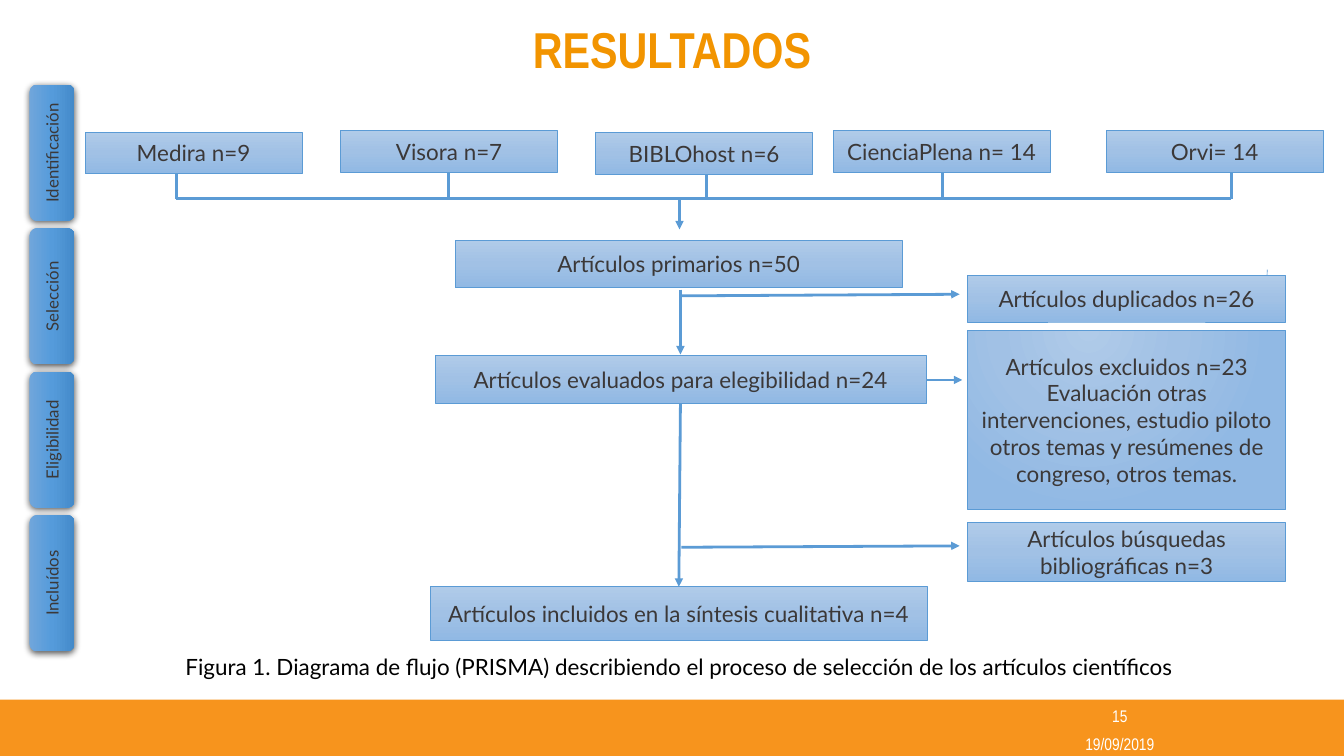
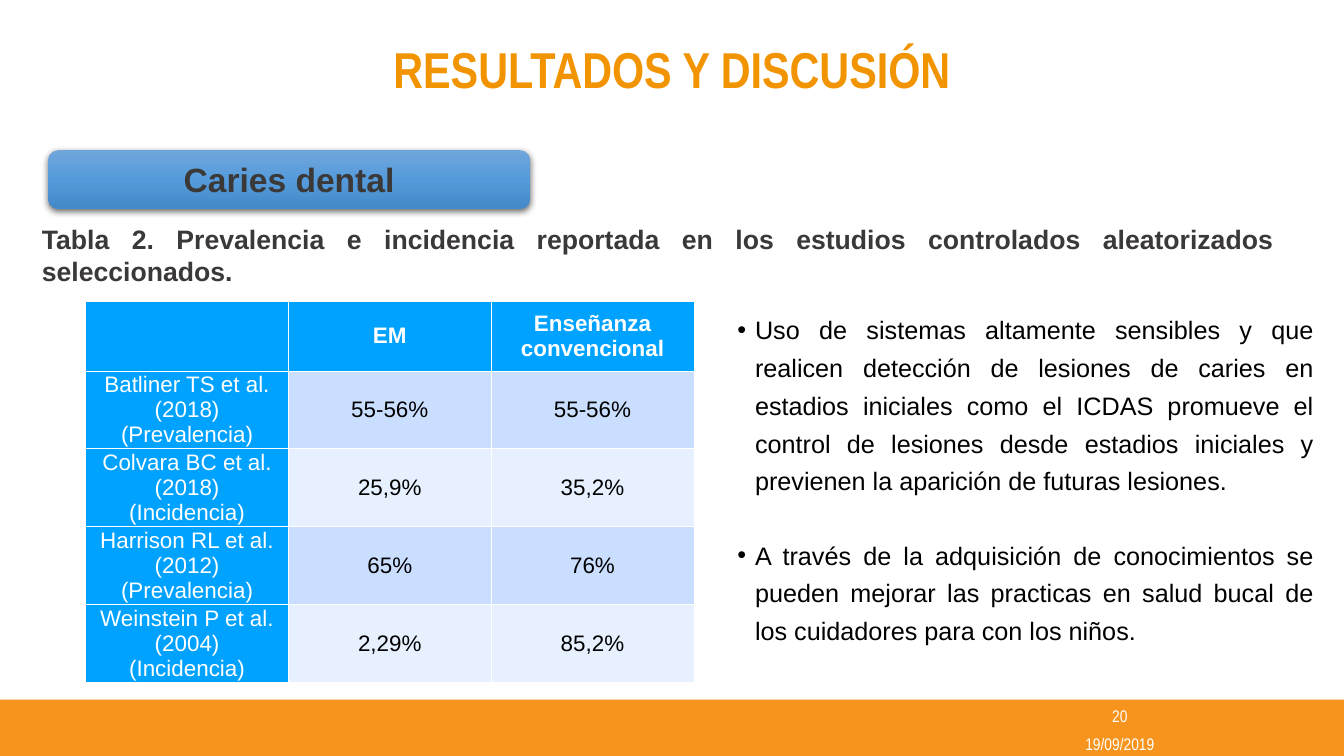
import copy
from collections import namedtuple

import lxml.etree
import pptx
import pptx.dml.color
import pptx.enum.shapes
import pptx.enum.text
import pptx.oxml.ns
import pptx.util

Cm = pptx.util.Cm
Pt = pptx.util.Pt
RGBColor = pptx.dml.color.RGBColor
PP_ALIGN = pptx.enum.text.PP_ALIGN
MSO_ANCHOR = pptx.enum.text.MSO_ANCHOR
MSO_SHAPE = pptx.enum.shapes.MSO_SHAPE
qn = pptx.oxml.ns.qn

# Shared look
WHITE = RGBColor(0xFF, 0xFF, 0xFF)
BLACK = RGBColor(0, 0, 0)
DARK = RGBColor(0x3B, 0x38, 0x38)
BAND_ORANGE = RGBColor(0xF7, 0x94, 0x1D)
TITLE_ORANGE = RGBColor(0xF2, 0x94, 0x00)
FLOW_BLUE = RGBColor(0x5B, 0x9B, 0xD5)
HEADER_BLUE = RGBColor(0x00, 0xA2, 0xFF)
ROW_TINTS = (RGBColor(0xCA, 0xDF, 0xFF), RGBColor(0xE6, 0xF0, 0xFF))
PALE_GRADIENT = (RGBColor(0xB0, 0xCB, 0xE9), RGBColor(0xA1, 0xC1, 0xE5),
                 RGBColor(0x91, 0xB9, 0xE4))
STRONG_GRADIENT = (RGBColor(0x70, 0xA6, 0xDB), RGBColor(0x55, 0x9B, 0xDB),
                   RGBColor(0x44, 0x8A, 0xC9))
HEADING_FONT, BODY_FONT, FLOW_FONT = "Arial Narrow", "Arial", "Lato"

# Boxes are in centimetres
Box = namedtuple("Box", "left top width height")


def inside(region, x, y, width, height):
    return Box(region.left + x, region.top + y, width, height)


def lengths(box):
    return [Cm(value) for value in box]


def add_run(paragraph, text, size, color, font, bold=False):
    run = paragraph.add_run()
    run.text = text
    run.font.size = Pt(size)
    run.font.color.rgb = color
    run.font.name = font
    run.font.bold = bold


def set_frame(frame, inset=0.25, anchor=MSO_ANCHOR.MIDDLE, wrap=True):
    frame.word_wrap = wrap
    frame.auto_size = pptx.enum.text.MSO_AUTO_SIZE.NONE
    frame.vertical_anchor = anchor
    frame.margin_left = frame.margin_right = Cm(inset)
    frame.margin_top = frame.margin_bottom = Cm(inset)


def add_text(slide, box, text, size, color, font, bold=False,
             align=PP_ALIGN.CENTER, **frame_options):
    frame = slide.shapes.add_textbox(*lengths(box)).text_frame
    set_frame(frame, **frame_options)
    frame.paragraphs[0].alignment = align
    add_run(frame.paragraphs[0], text, size, color, font, bold)


def fill_gradient(shape, colors, radial=False):
    shape.fill.gradient()
    shape.fill.gradient_angle = 270
    gradient = shape._element.spPr.find(qn("a:gradFill"))
    stops = gradient.find(qn("a:gsLst"))
    stops.append(copy.deepcopy(stops[-1]))
    for index, (stop, color) in enumerate(zip(shape.fill.gradient_stops, colors)):
        stop.position = index / 2
        stop.color.rgb = color
    if radial:
        linear = gradient.find(qn("a:lin"))
        circle = lxml.etree.Element(qn("a:path"), path="circle")
        lxml.etree.SubElement(circle, qn("a:fillToRect"),
                              l="38000", t="-20000", r="62000", b="120000")
        gradient.replace(linear, circle)


def add_flow_box(slide, box, text, radial=False):
    step = slide.shapes.add_shape(MSO_SHAPE.RECTANGLE, *lengths(box))
    step.shadow.inherit = False
    fill_gradient(step, PALE_GRADIENT, radial)
    step.line.color.rgb = FLOW_BLUE
    step.line.width = Pt(1)
    set_frame(step.text_frame)
    step.text_frame.margin_top = step.text_frame.margin_bottom = 0
    paragraph = step.text_frame.paragraphs[0]
    paragraph.alignment = PP_ALIGN.CENTER
    add_run(paragraph, text, 32, DARK, FLOW_FONT)


def add_tab(slide, box, text, size, font, bold=False, rotation=0):
    tab = slide.shapes.add_shape(MSO_SHAPE.ROUNDED_RECTANGLE, *lengths(box))
    tab.rotation = rotation
    tab.line.fill.background()
    fill_gradient(tab, STRONG_GRADIENT)
    # Soft shadow below the tab
    tab.shadow.inherit = False
    effects = tab._element.spPr.find(qn("a:effectLst"))
    shadow = lxml.etree.SubElement(
        effects, qn("a:outerShdw"), blurRad=str(Pt(10)), dist=str(Pt(3)),
        dir="5400000", algn="ctr", rotWithShape="0")
    shade = lxml.etree.SubElement(shadow, qn("a:srgbClr"), val="000000")
    lxml.etree.SubElement(shade, qn("a:alpha"), val="63000")
    set_frame(tab.text_frame)
    paragraph = tab.text_frame.paragraphs[0]
    paragraph.alignment = PP_ALIGN.CENTER
    add_run(paragraph, text, size, DARK, font, bold)


def add_link(slide, region, start, end, arrow=True, width=4):
    points = [Cm(region[axis] + point[axis])
              for point in (start, end) for axis in (0, 1)]
    link = slide.shapes.add_connector(
        pptx.enum.shapes.MSO_CONNECTOR.STRAIGHT, *points)
    link.line.color.rgb = FLOW_BLUE
    link.line.width = Pt(width)
    properties = link._element.spPr
    if arrow:
        lxml.etree.SubElement(properties.find(qn("a:ln")), qn("a:tailEnd"),
                              type="triangle")
    lxml.etree.SubElement(properties, qn("a:effectLst"))


def add_title(slide, box, text):
    title = slide.shapes.title
    title.left, title.top, title.width, title.height = lengths(box)
    set_frame(title.text_frame)
    paragraph = title.text_frame.paragraphs[0]
    paragraph.alignment = PP_ALIGN.CENTER
    add_run(paragraph, text, 72, TITLE_ORANGE, HEADING_FONT, True)


def add_footer(slide, region, number):
    band = slide.shapes.add_shape(MSO_SHAPE.RECTANGLE, *lengths(region))
    band.shadow.inherit = False
    band.fill.solid()
    band.fill.fore_color.rgb = BAND_ORANGE
    band.line.fill.background()
    add_text(slide, inside(region, 54.16, 1.49, 5.36, 1.52), "19/09/2019",
             24, WHITE, HEADING_FONT)
    add_text(slide, inside(region, 56.11, 0.07, 1.47, 1.52), number,
             24, WHITE, HEADING_FONT, wrap=False)


def start_slide(deck, title, title_top, number):
    slide = deck.slides.add_slide(deck.slide_layouts[5])
    add_footer(slide, Box(-0.41, 35.26, 68.53, 2.84), number)
    add_title(slide, Box(11.96, title_top, 43.82, 5.46), title)
    return slide


# Slide 15: selection flow
def add_stages(slide, region):
    stages = ("Identificación", "Selección", "Eligibilidad", "Incluídos")
    length, pitch = 6.86, 7.23
    for index, stage in enumerate(stages):
        # The frame is turned about its centre
        box = inside(region, (region.width - length) / 2,
                     index * pitch + (length - region.width) / 2,
                     length, region.width)
        add_tab(slide, box, stage, 24, FLOW_FONT, rotation=270)


def add_sources(slide, region):
    # Label, box offset, stem position
    sources = (("Medira n=9", 0, 0.07, 4.6),
               ("Visora n=7", 12.88, 0, 18.32),
               ("BIBLOhost n=6", 25.73, 0.1, 31.32),
               ("CienciaPlena n= 14", 37.7, 0, 43.21),
               ("Orvi= 14", 51.46, 0, 57.76))
    bus = region.height
    for label, x, y, stem in sources:
        add_link(slide, region, (stem, 2.1), (stem, bus), arrow=False)
        add_flow_box(slide, inside(region, x, y, 10.93, 2.11), label)
    add_link(slide, region, (sources[0][3], bus), (sources[-1][3], bus),
             arrow=False)


def add_flow(slide, region):
    add_link(slide, region, (42.17, 3.58), (42.14, 4.95), arrow=False, width=1)
    arrows = (((12.55, 0), (12.55, 1.55)),
              ((12.6, 4.59), (12.6, 7.85)),
              ((12.6, 10.34), (12.52, 19.56)),
              ((12.65, 4.9), (26.67, 4.82)),
              ((24.84, 9.14), (26.8, 9.14)),
              ((12.65, 17.57), (26.67, 17.5)))
    for start, end in arrows:
        add_link(slide, region, start, end)

    main_steps = (("Artículos primarios n=50", 1.25, 2.08, 22.53, 2.41),
                  ("Artículos evaluados para elegibilidad n=24",
                   0.23, 7.9, 24.77, 2.41),
                  ("Artículos incluidos en la síntesis cualitativa n=4",
                   0, 19.56, 25.02, 2.69))
    for text, *place in main_steps:
        add_flow_box(slide, inside(region, *place), text)

    side_steps = (("Artículos duplicados n=26", 3.86, 2.36, False),
                  ("Artículos excluidos n=23 Evaluación otras intervenciones, "
                   "estudio piloto otros temas y resúmenes de congreso, "
                   "otros temas.", 6.63, 9.04, True),
                  ("Artículos búsquedas bibliográficas n=3", 16.33, 2.95, False))
    for text, y, height, radial in side_steps:
        add_flow_box(slide, inside(region, 27.08, y, 16.02, height), text, radial)


def build_flow_slide(deck):
    slide = start_slide(deck, "RESULTADOS", -0.3, "15")
    add_stages(slide, Box(1.48, 4.27, 2.28, 28.55))
    add_sources(slide, Box(4.29, 6.58, 62.46, 3.43))
    add_flow(slide, Box(21.69, 10.01, 43.1, 22.25))
    add_text(slide, Box(2.46, 32.69, 63.55, 2.06),
             "Figura 1. Diagrama de flujo (PRISMA) describiendo el proceso "
             "de selección de los artículos científicos",
             32, BLACK, FLOW_FONT, anchor=MSO_ANCHOR.TOP)


# Slide 20: caries table and discussion
def add_caries_table(slide, region):
    rows = (([], ["EM"], ["Enseñanza convencional"]),
            (["Batliner TS et al. (2018)", "(Prevalencia)"], ["55-56%"], ["55-56%"]),
            (["Colvara BC et al. (2018)", "(Incidencia)"], ["25,9%"], ["35,2%"]),
            (["Harrison RL et al. (2012) (Prevalencia)"], ["65%"], ["76%"]),
            (["Weinstein P et al. (2004)", "(Incidencia)"], ["2,29%"], ["85,2%"]))
    header_height = 3.5
    table = slide.shapes.add_table(len(rows), 3, *lengths(region)).table
    for column in table.columns:
        column.width = Cm(region.width / 3)
    for r, row in enumerate(rows):
        table.rows[r].height = Cm(
            (region.height - header_height) / 4 if r else header_height)
        for c, lines in enumerate(row):
            cell = table.cell(r, c)
            heading = r == 0 or c == 0
            cell.fill.solid()
            cell.fill.fore_color.rgb = HEADER_BLUE if heading else ROW_TINTS[(r - 1) % 2]
            cell.vertical_anchor = MSO_ANCHOR.MIDDLE
            cell.margin_left = cell.margin_right = 0
            cell.margin_top = cell.margin_bottom = 0
            frame = cell.text_frame
            for index, line in enumerate(lines):
                paragraph = frame.add_paragraph() if index else frame.paragraphs[0]
                paragraph.alignment = PP_ALIGN.CENTER
                add_run(paragraph, line, 32, WHITE if heading else BLACK,
                        BODY_FONT, r == 0)


def add_discussion(slide, region):
    points = ("Uso de sistemas altamente sensibles y que realicen detección de "
              "lesiones de caries en estadios iniciales como el ICDAS promueve "
              "el control de lesiones desde estadios iniciales y previenen la "
              "aparición de futuras lesiones.",
              "A través de la adquisición de conocimientos se pueden mejorar las "
              "practicas en salud bucal de los cuidadores para con los niños.")
    frame = slide.shapes.add_textbox(*lengths(region)).text_frame
    set_frame(frame, inset=0.2)
    for index, point in enumerate(points):
        paragraph = frame.add_paragraph() if index else frame.paragraphs[0]
        paragraph.alignment = PP_ALIGN.JUSTIFY
        paragraph.line_spacing = 1.25
        if index:
            paragraph.space_before = Pt(52)
        properties = paragraph._p.get_or_add_pPr()
        properties.set("marL", str(Cm(0.89)))
        properties.set("indent", str(-Cm(0.89)))
        lxml.etree.SubElement(properties, qn("a:buFont"), typeface=BODY_FONT)
        lxml.etree.SubElement(properties, qn("a:buChar"), char="•")
        add_run(paragraph, point, 36, BLACK, BODY_FONT)


def build_caries_slide(deck):
    slide = start_slide(deck, "RESULTADOS Y DISCUSIÓN", 0.69, "20")
    add_caries_table(slide, Box(4.32, 15.19, 30.65, 19.2))
    add_tab(slide, Box(2.44, 7.57, 24.26, 2.95), "Caries dental", 48, BODY_FONT, True)
    add_text(slide, Box(1.98, 11.1, 62.36, 3.51),
             "Tabla 2. Prevalencia e incidencia reportada en los estudios "
             "controlados aleatorizados seleccionados.",
             38, DARK, BODY_FONT, True, PP_ALIGN.JUSTIFY,
             inset=0.13, anchor=MSO_ANCHOR.TOP)
    add_discussion(slide, Box(36.96, 15.77, 29.44, 16.48))


def main():
    deck = pptx.Presentation()
    deck.slide_width, deck.slide_height = Cm(67.73), Cm(38.1)
    build_flow_slide(deck)
    build_caries_slide(deck)
    deck.save("out.pptx")


if __name__ == "__main__":
    main()
